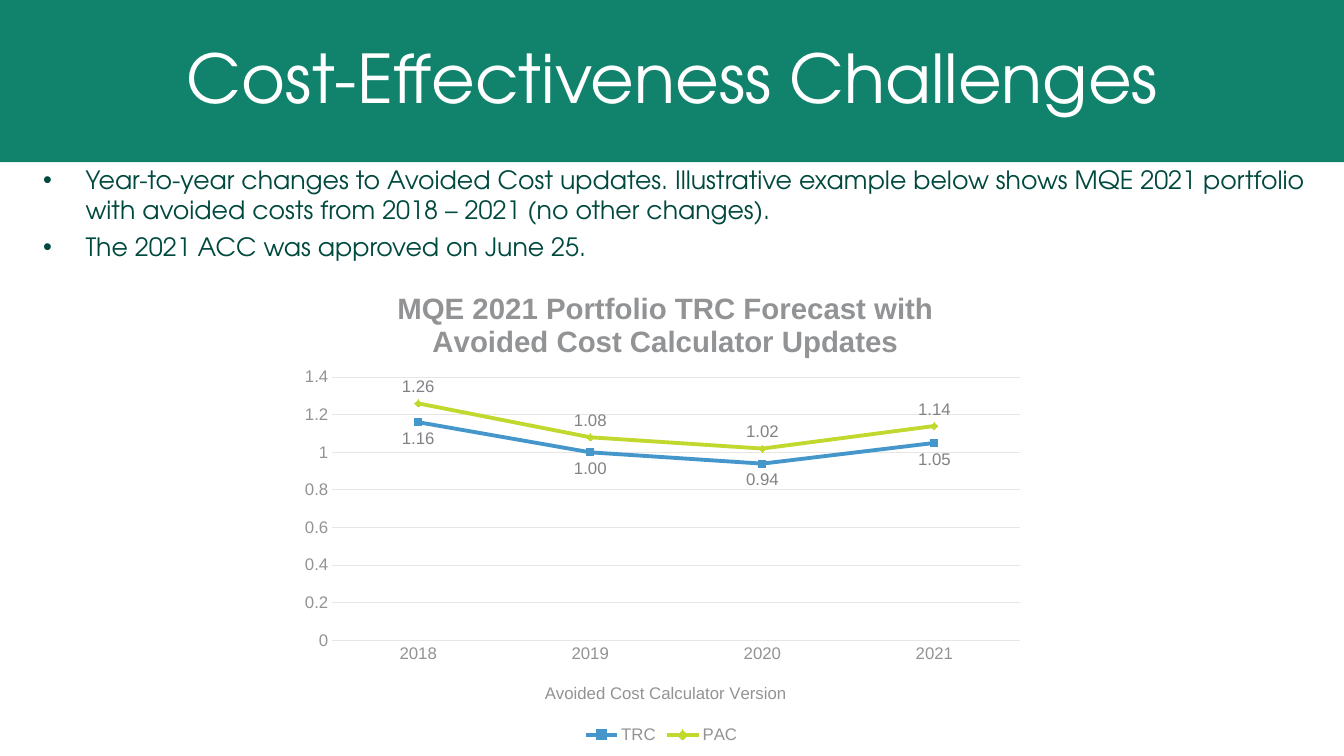
from dataclasses import dataclass

from lxml import etree
from pptx import Presentation
from pptx.chart.data import CategoryChartData
from pptx.dml.color import RGBColor
from pptx.enum.chart import XL_CHART_TYPE, XL_LABEL_POSITION, XL_LEGEND_POSITION, XL_TICK_MARK
from pptx.enum.shapes import MSO_SHAPE
from pptx.enum.text import MSO_ANCHOR, PP_ALIGN
from pptx.oxml.ns import qn
from pptx.util import Inches, Pt

LINE = XL_CHART_TYPE.LINE
ABOVE, BELOW = XL_LABEL_POSITION.ABOVE, XL_LABEL_POSITION.BELOW
BOTTOM = XL_LEGEND_POSITION.BOTTOM
NO_TICK = XL_TICK_MARK.NONE
RECT = MSO_SHAPE.RECTANGLE
MIDDLE = MSO_ANCHOR.MIDDLE
CENTER = PP_ALIGN.CENTER

GREEN = RGBColor(0x11, 0x83, 0x6D)
DARK = RGBColor(0x00, 0x49, 0x3E)
WHITE = RGBColor(0xFF, 0xFF, 0xFF)
BLUE = RGBColor(0x45, 0x97, 0xCB)
LIME = RGBColor(0xC1, 0xD8, 0x2F)
GRAY = RGBColor(0x92, 0x93, 0x95)
SLATE = RGBColor(0x81, 0x82, 0x85)
PALE = RGBColor(0xE6, 0xE6, 0xE7)

HEAD = "TeX Gyre Adventor"
BODY = "Arial"


@dataclass
class Series:
    name: str
    vals: tuple[float, ...]
    color: RGBColor
    side: XL_LABEL_POSITION


YEARS = ("2018", "2019", "2020", "2021")
SERIES = (
    Series("TRC", (1.16, 1, 0.94, 1.05), BLUE, BELOW),
    Series("PAC", (1.26, 1.08, 1.02, 1.14), LIME, ABOVE),
)
POINTS = (
    "Year-to-year changes to Avoided Cost updates. Illustrative example below shows "
    "MQE 2021 portfolio with avoided costs from 2018 – 2021 (no other changes).",
    "The 2021 ACC was approved on June 25.",
)


def style(font, size: float, color: RGBColor, face: str = BODY, bold: bool = False) -> None:
    font.size = Pt(size)
    font.name = face
    font.bold = bold
    font.color.rgb = color


def add_run(para, text: str, size: float, color: RGBColor, face: str, bold: bool = False) -> None:
    run = para.add_run()
    run.text = text
    style(run.font, size, color, face, bold)


def add_bullet(para) -> None:
    props = para._p.get_or_add_pPr()
    props.set("marL", str(Inches(0.75)))
    props.set("indent", str(Inches(-0.42)))
    tint = etree.SubElement(props, qn("a:buClr"))
    etree.SubElement(tint, qn("a:srgbClr"), val=str(DARK))
    etree.SubElement(props, qn("a:buFont"), typeface=BODY)
    etree.SubElement(props, qn("a:buChar"), char="•")


def place(owner, after: str, **spots: float) -> None:
    for old in owner.findall(qn("c:layout")):
        owner.remove(old)
    layout = etree.Element(qn("c:layout"))
    manual = etree.SubElement(layout, qn("c:manualLayout"))
    if "w" in spots:
        etree.SubElement(manual, qn("c:layoutTarget"), val="inner")
    for key in ("x", "y"):
        etree.SubElement(manual, qn(f"c:{key}Mode"), val="edge")
    for key, val in spots.items():
        etree.SubElement(manual, qn(f"c:{key}"), val=str(val))
    mark = owner.find(qn(after)) if after else None
    if mark is None:
        owner.insert(0, layout)
    else:
        mark.addnext(layout)


def add_title(owner, text: str, size: float, bold: bool, x: float, y: float) -> None:
    title = owner.chart_title if hasattr(owner, "chart_title") else owner.axis_title
    para = title.text_frame.paragraphs[0]
    para.alignment = CENTER
    add_run(para, text, size, GRAY, BODY, bold)
    place(title._element, "c:tx", x=x, y=y)


def add_head(slide) -> None:
    band = slide.shapes.add_shape(RECT, Inches(0), Inches(-0.03), Inches(13.35), Inches(1.64))
    band.shadow.inherit = False
    band.fill.solid()
    band.fill.fore_color.rgb = GREEN
    band.line.fill.background()
    box = slide.shapes.add_textbox(Inches(0), Inches(-0.06), Inches(13.34), Inches(1.64))
    frame = box.text_frame
    frame.word_wrap = True
    frame.vertical_anchor = MIDDLE
    frame.margin_left = frame.margin_right = Inches(0.13)
    frame.margin_top = frame.margin_bottom = Inches(0.07)
    para = frame.paragraphs[0]
    para.alignment = CENTER
    add_run(para, "Cost-Effectiveness Challenges", 48, WHITE, HEAD)


def add_points(slide) -> None:
    box = slide.shapes.add_textbox(Inches(0), Inches(1.58), Inches(13.33), Inches(1.08))
    frame = box.text_frame
    frame.word_wrap = True
    for i, text in enumerate(POINTS):
        para = frame.add_paragraph() if i else frame.paragraphs[0]
        para.space_before = Pt(4.8)
        add_bullet(para)
        add_run(para, text, 18, DARK, HEAD)


def add_graph(slide) -> None:
    data = CategoryChartData(number_format="0.00")
    data.categories = YEARS
    for item in SERIES:
        data.add_series(item.name, item.vals)
    chart = slide.shapes.add_chart(
        LINE, Inches(2.85), Inches(2.58), Inches(7.42), Inches(4.84), data
    ).chart
    style(chart.font, 12, GRAY)
    add_title(
        chart, "MQE 2021 Portfolio TRC Forecast with Avoided Cost Calculator Updates",
        21, True, 0.14, 0.05,
    )
    chart.has_legend = True
    chart.legend.position = BOTTOM
    chart.legend.include_in_layout = False
    style(chart.legend.font, 12, GRAY)

    cat, val = chart.category_axis, chart.value_axis
    for axis in (cat, val):
        axis.major_tick_mark = axis.minor_tick_mark = NO_TICK
        style(axis.tick_labels.font, 12, GRAY)
    cat.format.line.color.rgb = PALE
    cat.format.line.width = Pt(1)
    add_title(cat, "Avoided Cost Calculator Version", 12, False, 0.34, 0.86)
    val.minimum_scale, val.maximum_scale, val.major_unit = 0, 1.4, 0.2
    val.tick_labels.number_format = "General"
    val.tick_labels.number_format_is_linked = False
    val.format.line.fill.background()
    val.major_gridlines.format.line.color.rgb = PALE
    val.major_gridlines.format.line.width = Pt(0.75)

    plot = chart.plots[0]
    plot.vary_by_categories = False
    for line, item in zip(plot.series, SERIES):
        line.smooth = False
        line.marker.style = None
        line.format.line.color.rgb = item.color
        line.format.line.width = Pt(2.75)
        labels = line.data_labels
        labels.show_value = True
        labels.position = item.side
        labels.number_format = "0.00"
        labels.number_format_is_linked = False
        style(labels.font, 12, SLATE)
    area = chart._chartSpace.chart.plotArea
    place(area, "", x=0.06, y=0.24, w=0.92, h=0.54)


def main() -> None:
    deck = Presentation()
    deck.slide_width, deck.slide_height = Inches(13.33), Inches(7.5)
    slide = deck.slides.add_slide(deck.slide_layouts[6])
    add_head(slide)
    add_points(slide)
    add_graph(slide)
    deck.save("out.pptx")


if __name__ == "__main__":
    main()
